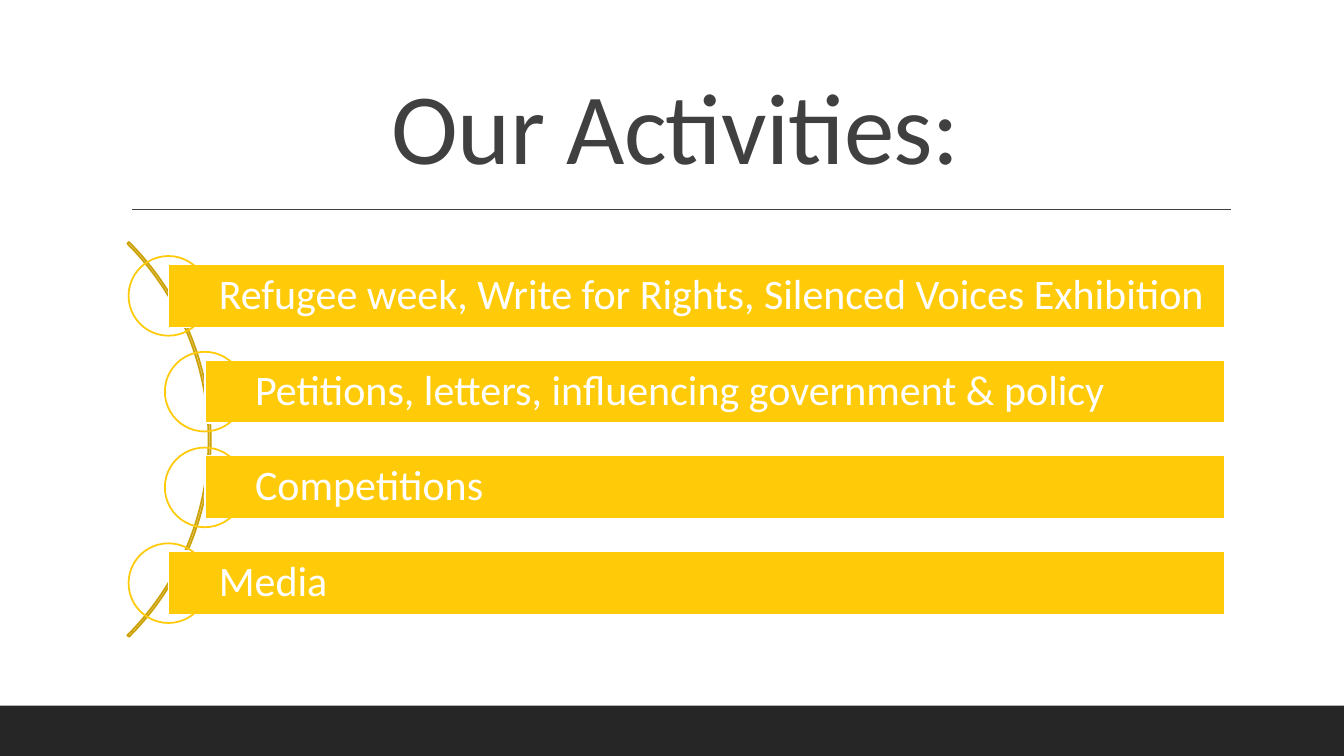
"""Build the activities slide: a title above four bars fanned along an arc."""
from lxml import etree
from pptx import Presentation
from pptx.dml.color import RGBColor
from pptx.enum.shapes import MSO_CONNECTOR, MSO_SHAPE
from pptx.enum.text import MSO_ANCHOR, PP_ALIGN
from pptx.oxml.ns import qn
from pptx.util import Inches, Pt

RECTANGLE, OVAL, ARC = MSO_SHAPE.RECTANGLE, MSO_SHAPE.OVAL, MSO_SHAPE.BLOCK_ARC
STRAIGHT = MSO_CONNECTOR.STRAIGHT
LEFT, CENTER = PP_ALIGN.LEFT, PP_ALIGN.CENTER
MIDDLE, BOTTOM = MSO_ANCHOR.MIDDLE, MSO_ANCHOR.BOTTOM

TITLE = "Our Activities:"
ACTIVITIES = [
    ("Refugee week, Write for Rights, Silenced Voices Exhibition", 1.67),
    ("Petitions, letters, influencing government & policy", 2.03),
    ("Competitions", 2.03),
    ("Media", 1.67),
]
COLORS = {"footer": "262626", "title": "404040", "bar": "FFCA08",
          "arc": "CCA206", "white": "FFFFFF"}
FONT = "Calibri"
SLIDE_WIDTH, SLIDE_HEIGHT, FOOTER_HEIGHT = 13.33, 7.5, 0.5
BAR_RIGHT, BAR_HEIGHT = 12.15, 0.63
FIRST_BAR_MIDDLE, BAR_PITCH = 2.935, 0.95
CIRCLE_SIZE = 0.79
ARC_BOX = (-3.45, 1.59, 5.54, 5.54)
ARC_ADJUSTMENTS = (189, 27, 0.004)


def color(name):
    return RGBColor.from_string(COLORS[name])


def add_shape(slide, kind, box, fill=None, line=None):
    shape = slide.shapes.add_shape(kind, *map(Inches, box))
    shape.shadow.inherit = False
    if fill:
        shape.fill.solid()
        shape.fill.fore_color.rgb = color(fill)
    else:
        shape.fill.background()
    if line:
        shape.line.color.rgb = color(line)
        shape.line.width = Pt(1.25)
    else:
        shape.line.fill.background()
    return shape


def write_text(shape, text, *, size, text_color, align, anchor, insets, tracking=0):
    frame = shape.text_frame
    frame.word_wrap = True
    frame.vertical_anchor = anchor
    (frame.margin_left, frame.margin_top,
     frame.margin_right, frame.margin_bottom) = map(Inches, insets)
    paragraph = frame.paragraphs[0]
    paragraph.alignment = align
    paragraph.line_spacing = 0.9
    run = paragraph.add_run()
    run.text = text
    run.font.name = FONT
    run.font.size = Pt(size)
    run.font.color.rgb = color(text_color)
    if tracking:
        run._r.get_or_add_rPr().set("spc", str(round(tracking * 100)))


def add_heading(slide):
    rule = slide.shapes.add_connector(STRAIGHT, *map(Inches, (1.31, 2.08, 12.21, 2.08)))
    rule.line.color.rgb = color("title")
    rule.line.width = Pt(1)
    etree.SubElement(rule._element.spPr, qn("a:effectLst"))
    title = slide.shapes.add_textbox(*map(Inches, (1.2, 0.31, 11, 1.59)))
    write_text(title, TITLE, size=72, text_color="title", align=CENTER,
               anchor=BOTTOM, insets=(0.1, 0.05, 0.1, 0.05), tracking=-0.5)


def add_activities(slide):
    arc = add_shape(slide, ARC, ARC_BOX, line="arc")
    for index, value in enumerate(ARC_ADJUSTMENTS):
        arc.adjustments[index] = value
    for index, (activity, left) in enumerate(ACTIVITIES):
        middle = FIRST_BAR_MIDDLE + index * BAR_PITCH
        bar = add_shape(slide, RECTANGLE,
                        (left, middle - BAR_HEIGHT / 2, BAR_RIGHT - left, BAR_HEIGHT),
                        fill="bar", line="white")
        write_text(bar, activity, size=30, text_color="white", align=LEFT,
                   anchor=MIDDLE, insets=(0.5, 0.08, 0.08, 0.08))
        add_shape(slide, OVAL,
                  (left - CIRCLE_SIZE / 2, middle - CIRCLE_SIZE / 2,
                   CIRCLE_SIZE, CIRCLE_SIZE), line="bar")


def main():
    presentation = Presentation()
    presentation.slide_width = Inches(SLIDE_WIDTH)
    presentation.slide_height = Inches(SLIDE_HEIGHT)
    slide = presentation.slides.add_slide(presentation.slide_layouts[6])
    add_shape(slide, RECTANGLE,
              (0, SLIDE_HEIGHT - FOOTER_HEIGHT, SLIDE_WIDTH, FOOTER_HEIGHT), fill="footer")
    add_heading(slide)
    add_activities(slide)
    presentation.save("out.pptx")


if __name__ == "__main__":
    main()
